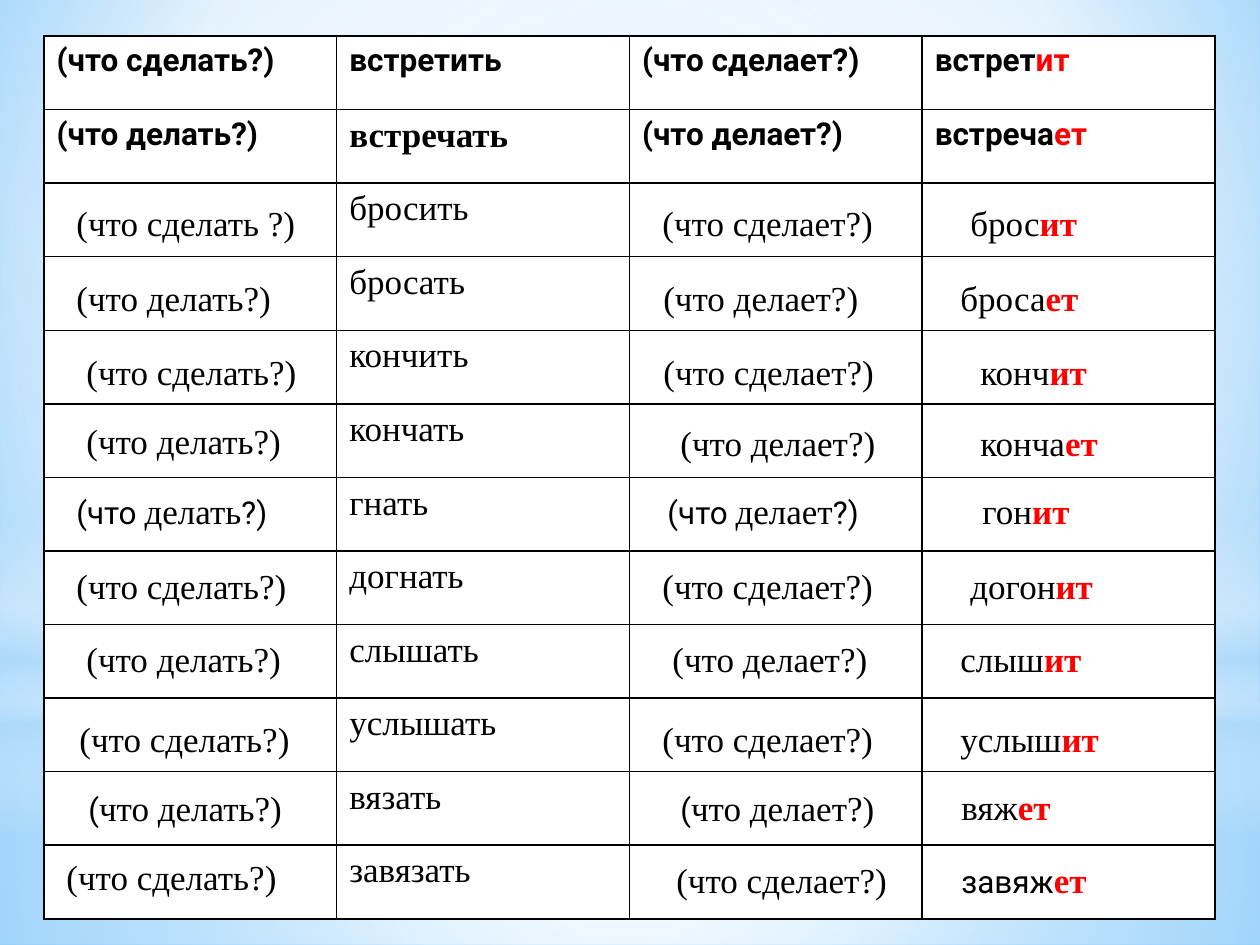
from dataclasses import dataclass

from lxml import etree
from pptx import Presentation
from pptx import util as u
from pptx.dml.color import RGBColor
from pptx.enum import shapes
from pptx.oxml.ns import qn

PX_PER_INCH = 126
WIDTH, HEIGHT = 1260, 945


@dataclass(frozen=True)
class TextStyle:
    font: str
    size: int
    color: str
    bold: bool = False


class Theme:
    black, red, white = "000000", "FF0000", "FFFFFF"
    sky = "B4DCFA"
    border = 1
    serif, sans = "Times New Roman", "Roboto"
    verb = TextStyle(serif, 20, black)
    verb_bold = TextStyle(serif, 20, black, True)
    ending = TextStyle(serif, 20, red, True)
    plain_sans = TextStyle(sans, 18, black)
    head = TextStyle(sans, 18, black, True)
    head_ending = TextStyle(sans, 18, red, True)


def px(length):
    return u.Emu(round(length * u.Inches(1) / PX_PER_INCH))


def set_font(font, style):
    font.name, font.size, font.bold = style.font, u.Pt(style.size), style.bold
    font.color.rgb = RGBColor.from_string(style.color)


def write(text_frame, runs):
    """Fill the first paragraph with (text, style) pairs."""
    paragraph = text_frame.paragraphs[0]
    if len({style for _, style in runs}) == 1:
        set_font(paragraph.font, runs[0][1])
    for words, style in runs:
        run = paragraph.add_run()
        run.text = words
        if len(runs) > 1:
            set_font(run.font, style)


def set_gradient(element, stops, center=None, angle=None):
    """Swap a solid fill for a gradient of (position, colour, opacity) stops."""
    solid = next(element.iter(qn("a:solidFill")))
    gradient = etree.Element(qn("a:gradFill"), rotWithShape="1")
    stop_list = etree.SubElement(gradient, qn("a:gsLst"))
    for position, color, opacity in stops:
        stop = etree.SubElement(stop_list, qn("a:gs"), pos=str(position * 1000))
        value = etree.SubElement(stop, qn("a:srgbClr"), val=color)
        if opacity < 100:
            etree.SubElement(value, qn("a:alpha"), val=str(opacity * 1000))
    if center:
        circle = etree.SubElement(gradient, qn("a:path"))
        circle.set("path", "circle")
        sides = {side: str(inset * 1000) for side, inset in zip("ltrb", center)}
        etree.SubElement(circle, qn("a:fillToRect"), sides)
    else:
        etree.SubElement(gradient, qn("a:lin"), ang=str(angle * 60000), scaled="0")
    solid.getparent().replace(solid, gradient)


def set_borders(cell, color, points):
    properties = cell._tc.get_or_add_tcPr()
    for index, side in enumerate(("lnL", "lnR", "lnT", "lnB")):
        line = etree.Element(qn(f"a:{side}"), w=str(u.Pt(points)))
        fill = etree.SubElement(line, qn("a:solidFill"))
        etree.SubElement(fill, qn("a:srgbClr"), val=color)
        properties.insert(index, line)


class SlideBuilder:
    def __init__(self, slide, theme):
        self.slide, self.theme = slide, theme

    def background(self, stops, center):
        self.slide.background.fill.solid()
        set_gradient(self.slide._element.cSld, stops, center)

    def glow(self, kind, left, top, width, height, stops, **direction):
        shape = self.slide.shapes.add_shape(
            kind, px(left), px(top), px(width), px(height))
        shape.shadow.inherit = False
        shape.line.fill.background()
        shape.fill.solid()
        set_gradient(shape._element.spPr, stops, **direction)

    def table(self, left, top, width, height, rows):
        table = self.slide.shapes.add_table(
            len(rows), len(rows[0]), px(left), px(top), px(width), px(height)).table
        table.first_row = table.horz_banding = False
        for r, row in enumerate(rows):
            for c, runs in enumerate(row):
                cell = table.cell(r, c)
                cell.fill.solid()
                cell.fill.fore_color.rgb = RGBColor.from_string(self.theme.white)
                set_borders(cell, self.theme.black, self.theme.border)
                if runs:
                    write(cell.text_frame, runs)

    def label(self, left, top, width, runs):
        box = self.slide.shapes.add_textbox(px(left), px(top), px(width), px(55))
        box.text_frame.word_wrap = True
        write(box.text_frame, runs)


def verb(text):
    return [(text, Theme.verb)]


def head(text, ending=""):
    runs = [(text, Theme.head)]
    return runs + [(ending, Theme.head_ending)] if ending else runs


def form(stem, ending, style=Theme.verb):
    return [(stem, style), (ending, Theme.ending)]


def mixed(opening, middle, closing=""):
    """Question whose opening and closing are set in the sans font."""
    runs = [(opening, Theme.plain_sans), (middle, Theme.verb)]
    return runs + [(closing, Theme.plain_sans)] if closing else runs


HEAD_ROWS = [
    [head("(что сделать?)"), head("встретить"),
     head("(что сделает?)"), head("встрет", "ит")],
    [head("(что делать?)"), [("встречать", Theme.verb_bold)],
     head("(что делает?)"), head("встреча", "ет")],
]
INFINITIVES = ["бросить", "бросать", "кончить", "кончать", "гнать",
               "догнать", "слышать", "услышать", "вязать", "завязать"]

TO_DO, TO_HAVE_DONE = verb("(что делать?)"), verb("(что сделать?)")
DOES, WILL_DO = verb("(что делает?)"), verb("(что сделает?)")

# left, top, width, runs
LABELS = [
    (64, 195, 268, verb("(что сделать ?)")),
    (650, 195, 258, WILL_DO),
    (958, 195, 189, form("брос", "ит")),
    (64, 270, 256, TO_DO),
    (651, 270, 238, DOES),
    (948, 270, 169, form("броса", "ет")),
    (74, 344, 247, TO_HAVE_DONE),
    (651, 344, 256, WILL_DO),
    (968, 344, 139, form("конч", "ит")),
    (74, 413, 238, TO_DO),
    (668, 415, 222, DOES),
    (968, 415, 179, form("конча", "ет")),
    (64, 483, 238, mixed("(что ", "делать", "?)")),
    (655, 483, 222, mixed("(что ", "делает", "?)")),
    (970, 483, 126, form("гон", "ит")),
    (64, 558, 268, TO_HAVE_DONE),
    (650, 558, 241, WILL_DO),
    (958, 558, 208, form("догон", "ит")),
    (74, 631, 238, TO_DO),
    (660, 631, 222, DOES),
    (948, 631, 218, form("слыш", "ит")),
    (67, 711, 247, TO_HAVE_DONE),
    (650, 711, 268, WILL_DO),
    (948, 711, 218, form("услыш", "ит")),
    (76, 780, 228, mixed("(", "что делать?)")),
    (668, 780, 241, mixed("(", "что делает?)")),
    (949, 779, 169, form("вяж", "ет")),
    (54, 849, 258, TO_HAVE_DONE),
    (664, 852, 249, WILL_DO),
    (949, 852, 178, form("завяж", "ет", Theme.plain_sans)),
]


def main():
    presentation = Presentation()
    presentation.slide_width, presentation.slide_height = px(WIDTH), px(HEIGHT)
    slide = presentation.slides.add_slide(presentation.slide_layouts[6])
    builder = SlideBuilder(slide, Theme)
    white, sky = Theme.white, Theme.sky
    rectangle, oval = shapes.MSO_SHAPE.RECTANGLE, shapes.MSO_SHAPE.OVAL
    middle = (50, 50, 50, 50)

    builder.background(
        [(0, "9ED5FF", 100), (60, white, 100), (100, "5BB9FF", 100)], (20, 10, 20, 60))
    builder.glow(rectangle, 0, 703, WIDTH, 242,
                 [(0, white, 91), (37, white, 76), (100, sky, 79)], center=middle)
    builder.glow(rectangle, 0, 0, WIDTH, 703,
                 [(0, white, 89), (48, white, 62), (100, sky, 79)], center=middle)
    builder.glow(rectangle, 0, 519, WIDTH, 315,
                 [(0, white, 0), (29, white, 30), (45, sky, 40),
                  (55, white, 26), (65, sky, 60), (100, white, 0)], angle=90)
    builder.glow(oval, 0, 221, WIDTH, 703,
                 [(0, white, 100), (56, white, 0)], center=middle)

    verb_rows = [[None, verb(infinitive), None, None] for infinitive in INFINITIVES]
    builder.table(44, 36, 1171, 883, HEAD_ROWS + verb_rows)
    for label in LABELS:
        builder.label(*label)
    presentation.save("out.pptx")


if __name__ == "__main__":
    main()
